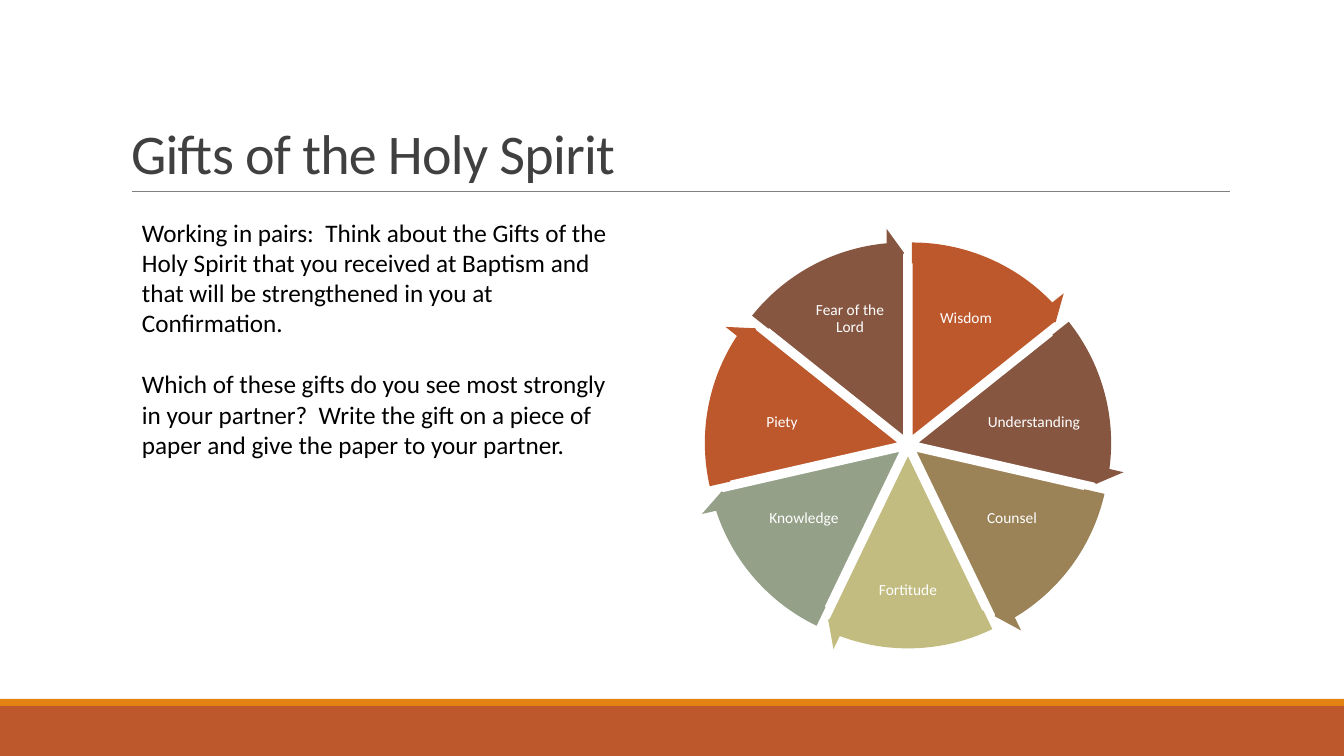
from math import cos, pi, sin

from lxml.etree import SubElement
from pptx import Presentation
from pptx.dml.color import RGBColor
from pptx.enum.shapes import MSO_CONNECTOR, MSO_SHAPE
from pptx.enum.text import MSO_ANCHOR, MSO_AUTO_SIZE, PP_ALIGN
from pptx.oxml.ns import qn
from pptx.util import Pt

EMU_PER_PX = 914400 / 100.8
SLIDE_W, SLIDE_H = 1344, 756
FULL_TURN = 216  # adjustment value of 360 degrees
COLOURS = ["BD582C", "865640", "9B8357", "C2BC80", "94A088"]
# gift, label centre relative to the wheel centre, label size
GIFTS = [
    ("Wisdom", 58, -126, 89, 70),
    ("Understanding", 126, -23, 102, 62),
    ("Counsel", 104, 73, 89, 69),
    ("Fortitude", 0, 146, 87, 62),
    ("Knowledge", -104, 73, 89, 69),
    ("Piety", -126, -23, 102, 62),
    ("Fear of the Lord", -58, -126, 89, 70),
]
TASK = [
    "Working in pairs:  Think about the Gifts of the Holy Spirit that you received "
    "at Baptism and that will be strengthened in you at Confirmation.",
    "Which of these gifts do you see most strongly in your partner?  Write the gift "
    "on a piece of paper and give the paper to your partner.",
]


def px(*lengths):
    return [round(n * EMU_PER_PX) for n in lengths]


def rgb(colour):
    return RGBColor.from_string(colour)


def set_text(sp, *paragraphs, size, colour, align=PP_ALIGN.LEFT, anchor=MSO_ANCHOR.TOP,
             line=1.0, gap=0, spacing=0, inset=None):
    """Fill sp with paragraphs; gap is the space between them in points."""
    tf = sp.text_frame
    tf.word_wrap = True
    tf.auto_size = MSO_AUTO_SIZE.NONE
    tf.vertical_anchor = anchor
    if inset is not None:
        side = px(inset)[0]
        tf.margin_left = tf.margin_right = tf.margin_top = tf.margin_bottom = side
    for i, text in enumerate(paragraphs):
        p = tf.add_paragraph() if i else tf.paragraphs[0]
        p.alignment, p.line_spacing = align, line
        p.space_before = Pt(gap if i else 0)
        r = p.add_run()
        r.text = text
        r.font.name, r.font.size = "Calibri", Pt(size)
        r.font.color.rgb = rgb(colour)
        if spacing:
            r._r.get_or_add_rPr().set("spc", str(round(spacing * 100)))


def add_filled(shapes, kind, x, y, w, h, fill, line=None, adjustments=()):
    sp = shapes.add_shape(kind, *px(x, y, w, h))
    sp.shadow.inherit = False
    sp.fill.solid()
    sp.fill.fore_color.rgb = rgb(fill)
    if line:
        sp.line.color.rgb = rgb(line)
        sp.line.width = Pt(1.25)
    else:
        sp.line.fill.background()
    for i, value in enumerate(adjustments):
        sp.adjustments[i] = value
    return sp


def add_footer_bands(s, y):
    add_filled(s.shapes, MSO_SHAPE.RECTANGLE, 0, y + 7, SLIDE_W, SLIDE_H - y - 7, "BD582C")
    add_filled(s.shapes, MSO_SHAPE.RECTANGLE, 0, y, SLIDE_W, 7, "E48312")


def add_title(s, x, y, w, h):
    rule = s.shapes.add_connector(MSO_CONNECTOR.STRAIGHT, *px(x + 11, y + h, x + w - 0, y + h))
    rule.line.color.rgb = rgb("808080")
    rule.line.width = Pt(0.5)
    SubElement(rule._element.spPr, qn("a:effectLst"))
    title = s.shapes.title
    title.left, title.top, title.width, title.height = px(x, y, w, h)
    set_text(title, "Gifts of the Holy Spirit", size=40, colour="404040",
             anchor=MSO_ANCHOR.BOTTOM, line=0.85, spacing=-0.5)


def add_task(s, x, y, w, h):
    set_text(s.shapes.add_textbox(*px(x, y, w, h)), *TASK, size=18, colour="000000", gap=22)


def add_gift_wheel(s, cx, cy, diameter, arrow_diameter, offset):
    """Draw one slice, label and rim arrow per gift, each pushed out from the centre."""
    shapes = s.shapes.add_group_shape().shapes
    step = FULL_TURN / len(GIFTS)
    arrows = []
    for i, (gift, dx, dy, w, h) in enumerate(GIFTS):
        start = (FULL_TURN * 3 / 4 + i * step) % FULL_TURN
        end = (start + step) % FULL_TURN
        middle = 2 * pi * (start + step / 2) / FULL_TURN
        x, y = cx + offset * cos(middle), cy + offset * sin(middle)
        colour = COLOURS[i % len(COLOURS)]
        add_filled(shapes, MSO_SHAPE.PIE, x - diameter / 2, y - diameter / 2,
                   diameter, diameter, colour, "FFFFFF", (start, end))
        label = shapes.add_textbox(*px(cx + dx - w / 2, cy + dy - h / 2, w, h))
        set_text(label, gift, size=11, colour="FFFFFF", align=PP_ALIGN.CENTER,
                 anchor=MSO_ANCHOR.MIDDLE, line=0.9, inset=2)
        arrows.append((x, y, start, end, colour))
    head = 3.28
    for x, y, start, end, colour in arrows:
        add_filled(shapes, MSO_SHAPE.CIRCULAR_ARROW, x - arrow_diameter / 2,
                   y - arrow_diameter / 2, arrow_diameter, arrow_diameter, colour,
                   adjustments=(0.05, head, (end - head) % FULL_TURN, start, 0.06))


def main():
    prs = Presentation()
    prs.slide_width, prs.slide_height = px(SLIDE_W, SLIDE_H)
    s = prs.slides.add_slide(prs.slide_layouts[5])
    add_footer_bands(s, 699)
    add_title(s, 121, 31, 1109, 160)
    add_gift_wheel(s, 908, 445, 373, 418, 9)
    add_task(s, 132, 212, 503, 254)
    prs.save("out.pptx")


if __name__ == "__main__":
    main()
